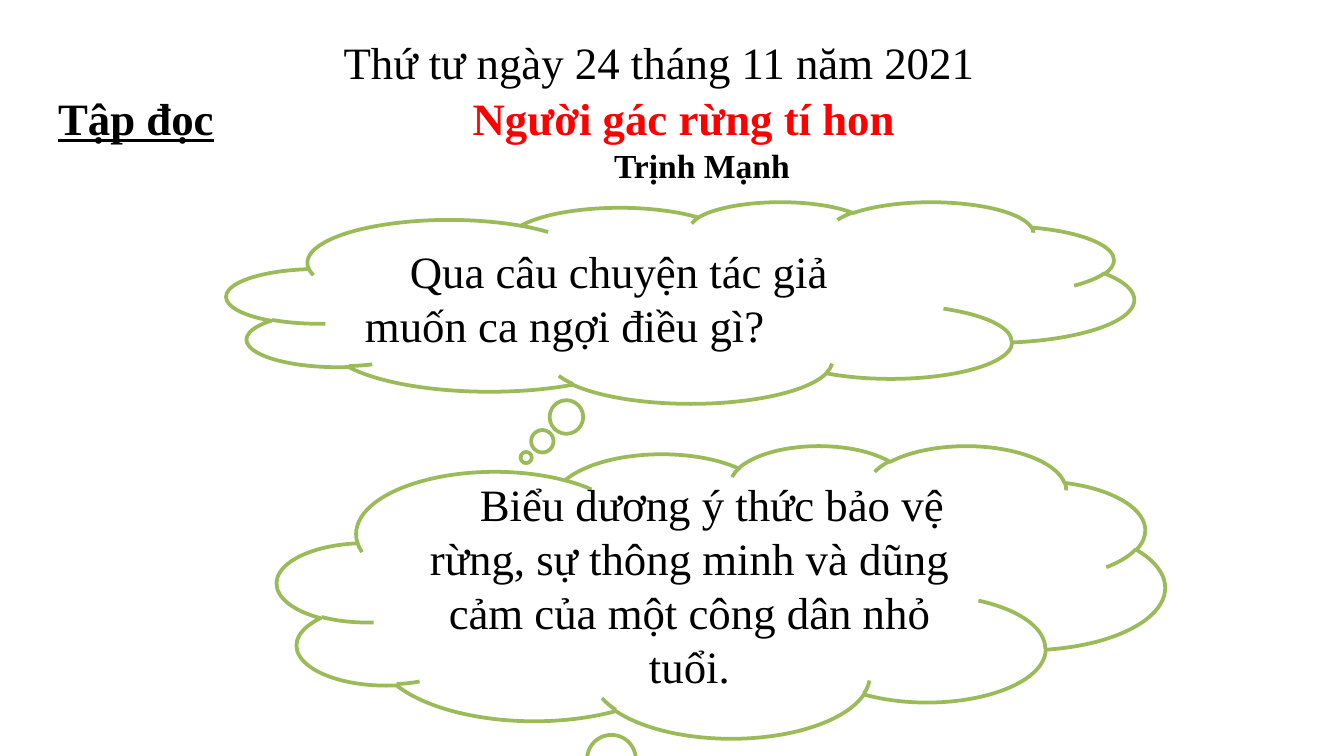
from pptx import Presentation
from pptx.dml.color import RGBColor
from pptx.enum.shapes import MSO_SHAPE
from pptx.enum.text import MSO_ANCHOR as Anchor, MSO_AUTO_SIZE as AutoSize, PP_ALIGN as Align
from pptx.util import Emu, Pt

SCALE = 9525
FONT = "Times New Roman"
COLORS = {"ink": "000000", "title": "FF0000", "cloud": "FFFFFF", "outline": "9BBB59"}


def px(*lengths):
    return [Emu(length * SCALE) for length in lengths]


def color(name):
    return RGBColor.from_string(COLORS[name])


def write(paragraph, text, size=24, ink="ink", bold=False, underline=False,
          align=Align.LEFT, margin=0, indent=0):
    paragraph.alignment = align
    properties = paragraph._p.get_or_add_pPr()
    properties.set("marL", str(margin * SCALE))
    properties.set("indent", str(indent * SCALE))
    run = paragraph.add_run()
    run.text = text
    font = run.font
    font.name, font.size = FONT, Pt(size)
    font.bold, font.underline = bold, underline
    font.color.rgb = color(ink)


class LessonSlide:
    def __init__(self, presentation):
        self.slide = presentation.slides.add_slide(presentation.slide_layouts[5])

    def title(self, box, text, author):
        shape = self.slide.shapes.title
        shape.left, shape.top, shape.width, shape.height = px(*box)
        frame = shape.text_frame
        frame.word_wrap = True
        frame.auto_size = AutoSize.SHAPE_TO_FIT_TEXT
        frame.vertical_anchor = Anchor.TOP
        write(frame.paragraphs[0], text, ink="title", bold=True)
        write(frame.add_paragraph(), author, size=18, bold=True, margin=101)

    def label(self, box, text, wrap=True, **style):
        frame = self.slide.shapes.add_textbox(*px(*box)).text_frame
        frame.word_wrap = wrap
        frame.auto_size = AutoSize.SHAPE_TO_FIT_TEXT
        write(frame.paragraphs[0], text, **style)

    def cloud(self, box, tail, text, **style):
        shape = self.slide.shapes.add_shape(MSO_SHAPE.CLOUD_CALLOUT, *px(*box))
        shape.shadow.inherit = False
        shape.adjustments[0], shape.adjustments[1] = tail
        shape.fill.solid()
        shape.fill.fore_color.rgb = color("cloud")
        shape.line.color.rgb = color("outline")
        shape.line.width = Pt(2)
        frame = shape.text_frame
        frame.word_wrap = True
        frame.vertical_anchor = Anchor.MIDDLE
        write(frame.paragraphs[0], text, indent=32, **style)


def main():
    presentation = Presentation()
    presentation.slide_width, presentation.slide_height = px(960, 540)
    lesson = LessonSlide(presentation)
    lesson.label((32, 60, 132, 49), "Tập đọc", wrap=False, bold=True, underline=True)
    lesson.title((328, 60, 323, 78), "Người gác rừng tí hon", "Trịnh Mạnh")
    lesson.cloud((162, 144, 648, 144), (-0.17, 0.77),
                 "Qua câu chuyện tác giả muốn ca ngợi điều gì?")
    lesson.cloud((198, 318, 634, 209), (-0.17, 0.79),
                 "Biểu dương ý thức bảo vệ rừng, sự thông minh và dũng cảm "
                 "của một công dân nhỏ tuổi.", align=Align.CENTER)
    lesson.label((236, 20, 548, 49), "Thứ tư ngày 24 tháng 11 năm 2021")
    presentation.save("out.pptx")


if __name__ == "__main__":
    main()
